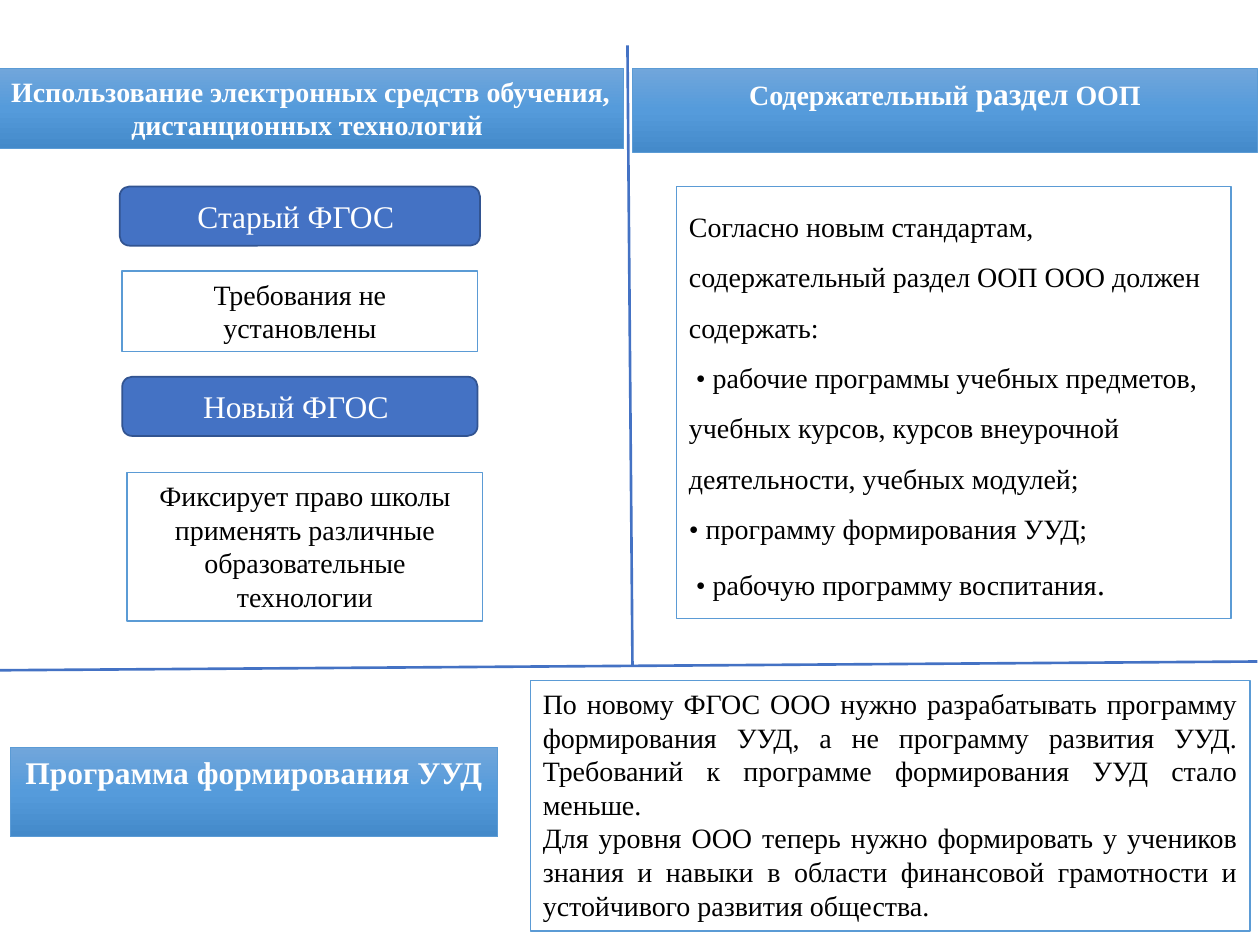
from copy import deepcopy
from dataclasses import dataclass

from pptx import Presentation
from pptx import util as u
from pptx.dml.color import RGBColor
from pptx.enum import shapes, text
from pptx.oxml.ns import qn
from lxml import etree

ALIGN = text.PP_ALIGN


@dataclass(frozen=True)
class Theme:
    font: str = "Times New Roman"
    white: str = "FFFFFF"
    black: str = "000000"
    accent: str = "4472C4"
    accent_edge: str = "325491"
    border: str = "5B9BD5"
    gradient: tuple = ("71A6DB", "559BDB", "448ACA")
    body: int = 16
    large: int = 18


class SlideBuilder:
    def __init__(self, page, theme):
        self.page = page
        self.theme = theme

    def _shape(self, kind, area, edge, width):
        box = self.page.shapes.add_shape(kind, *map(u.Inches, area))
        box.shadow.inherit = False
        box.line.color.rgb = RGBColor.from_string(edge)
        box.line.width = u.Pt(width)
        return box

    def _solid(self, box, color):
        box.fill.solid()
        box.fill.fore_color.rgb = RGBColor.from_string(color)

    def _write(self, box, paragraphs, color, size, align=ALIGN.CENTER,
               bold=False, spacing=None, anchor=text.MSO_ANCHOR.TOP, wrap=True):
        """Each paragraph is a string or a list of (string, size) spans."""
        frame = box.text_frame
        frame.word_wrap = wrap
        frame.vertical_anchor = anchor
        for index, content in enumerate(paragraphs):
            para = frame.add_paragraph() if index else frame.paragraphs[0]
            para.alignment = align
            if spacing:
                para.line_spacing = spacing
            spans = [(content, size)] if isinstance(content, str) else content
            for words, points in spans:
                span = para.add_run()
                span.text = words
                span.font.name = self.theme.font
                span.font.size = u.Pt(points)
                span.font.bold = bold
                span.font.color.rgb = RGBColor.from_string(color)

    def heading(self, area, paragraphs, size, wrap=True):
        box = self._shape(shapes.MSO_SHAPE.RECTANGLE, area, self.theme.border, 0.5)
        box.fill.gradient()
        box.fill.gradient_angle = 270
        # Add a middle stop to the two default ones
        stops = box.element.spPr.find(qn("a:gradFill")).find(qn("a:gsLst"))
        middle = deepcopy(stops[0])
        middle.set("pos", "50000")
        stops.insert(1, middle)
        for stop, color in zip(box.fill.gradient_stops, self.theme.gradient):
            stop.color.rgb = RGBColor.from_string(color)
        self._write(box, paragraphs, self.theme.white, size, bold=True, wrap=wrap)

    def label(self, area, words):
        box = self._shape(shapes.MSO_SHAPE.ROUNDED_RECTANGLE, area,
                          self.theme.accent_edge, 1)
        self._solid(box, self.theme.accent)
        self._write(box, [words], self.theme.white, self.theme.large,
                    anchor=text.MSO_ANCHOR.MIDDLE)

    def note(self, area, paragraphs, align=ALIGN.CENTER, spacing=None):
        box = self._shape(shapes.MSO_SHAPE.RECTANGLE, area, self.theme.border, 1)
        self._solid(box, self.theme.white)
        self._write(box, paragraphs, self.theme.black, self.theme.body,
                    align=align, spacing=spacing)

    def divider(self, start, end):
        line = self.page.shapes.add_connector(
            shapes.MSO_CONNECTOR.STRAIGHT, *map(u.Inches, start + end))
        line.line.color.rgb = RGBColor.from_string(self.theme.accent)
        line.line.width = u.Pt(1.5)
        etree.SubElement(line.element.spPr, qn("a:effectLst"))


def main():
    deck = Presentation()
    deck.slide_width, deck.slide_height = u.Inches(10), u.Inches(7.5)
    theme = Theme()
    slide = SlideBuilder(deck.slides.add_slide(deck.slide_layouts[6]), theme)

    # Left: e-learning under the old and new standards
    slide.heading((-0.02, 0.54, 4.97, 0.64), [
        "Использование электронных средств обучения, ",
        "дистанционных технологий ",
    ], theme.body)
    slide.label((0.95, 1.48, 2.86, 0.47), "Старый ФГОС ")
    slide.label((0.97, 2.99, 2.82, 0.47), "Новый ФГОС ")
    slide.note((0.97, 2.15, 2.82, 0.64), ["Требования не установлены"])
    slide.note((1.01, 3.75, 2.82, 1.18), [
        "Фиксирует право школы применять различные образовательные технологии",
    ])

    # Dividers between the three sections
    slide.divider((4.98, 0.36), (5.02, 5.29))
    slide.divider((-0.02, 5.32), (9.98, 5.25))

    # Right: content section of the programme
    slide.heading((5.02, 0.54, 4.96, 0.67), [[
        ("Содержательный ", theme.body),
        ("раздел", theme.large),
        (" ООП", theme.body),
    ]], theme.body)
    slide.note((5.37, 1.48, 4.4, 3.43), [
        "Согласно новым стандартам, содержательный раздел ООП ООО должен содержать:",
        " • рабочие программы учебных предметов, учебных курсов, "
        "курсов внеурочной деятельности, учебных модулей;",
        "• программу формирования УУД;",
        [(" • рабочую программу воспитания", theme.body), (".", theme.large)],
    ], align=ALIGN.LEFT, spacing=1.5)

    # Bottom: learning skills programme
    slide.heading((0.08, 5.93, 3.87, 0.71), ["Программа формирования УУД"],
                  theme.large, wrap=False)
    slide.note((4.21, 5.4, 5.71, 1.99), [
        "По новому ФГОС ООО нужно разрабатывать программу формирования УУД, "
        "а не программу развития УУД. Требований к программе формирования УУД "
        "стало меньше. ",
        "Для уровня ООО теперь нужно формировать у учеников знания и навыки "
        "в области финансовой грамотности и устойчивого развития общества.",
    ], align=ALIGN.JUSTIFY)

    deck.save("out.pptx")


if __name__ == "__main__":
    main()
